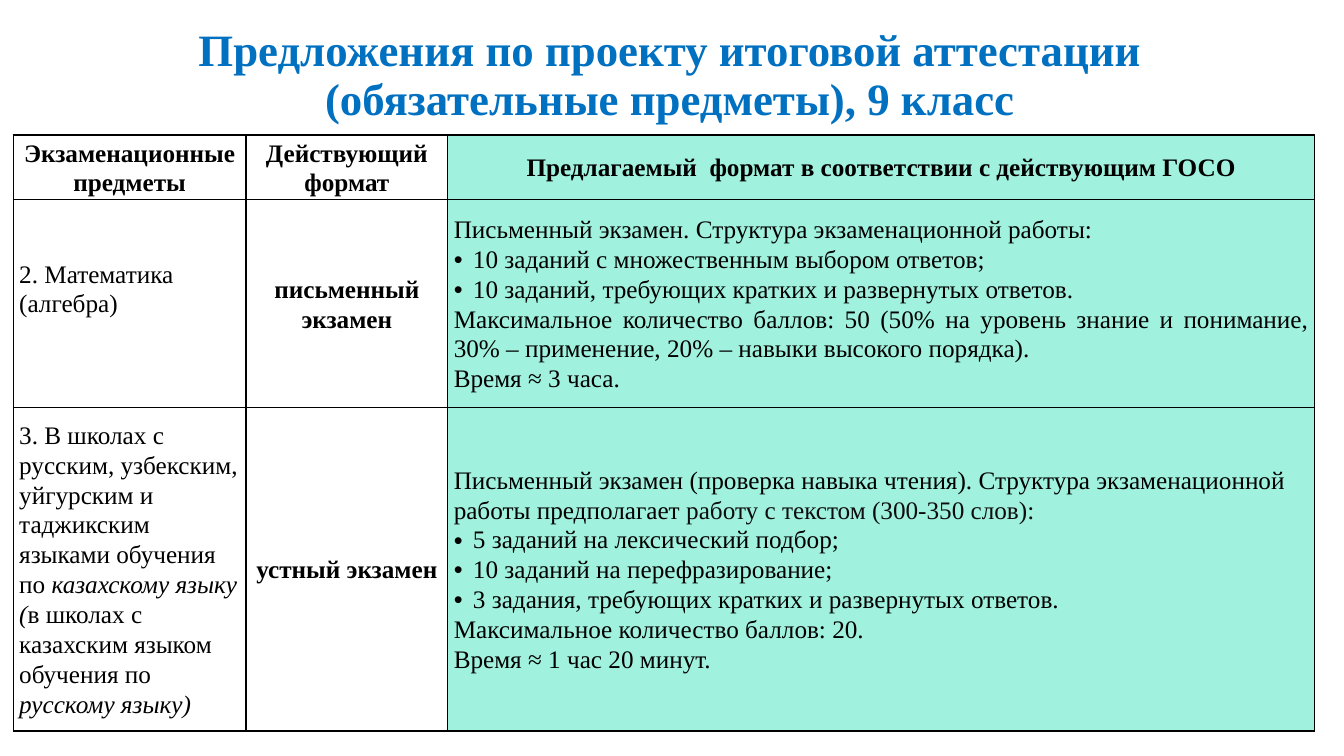
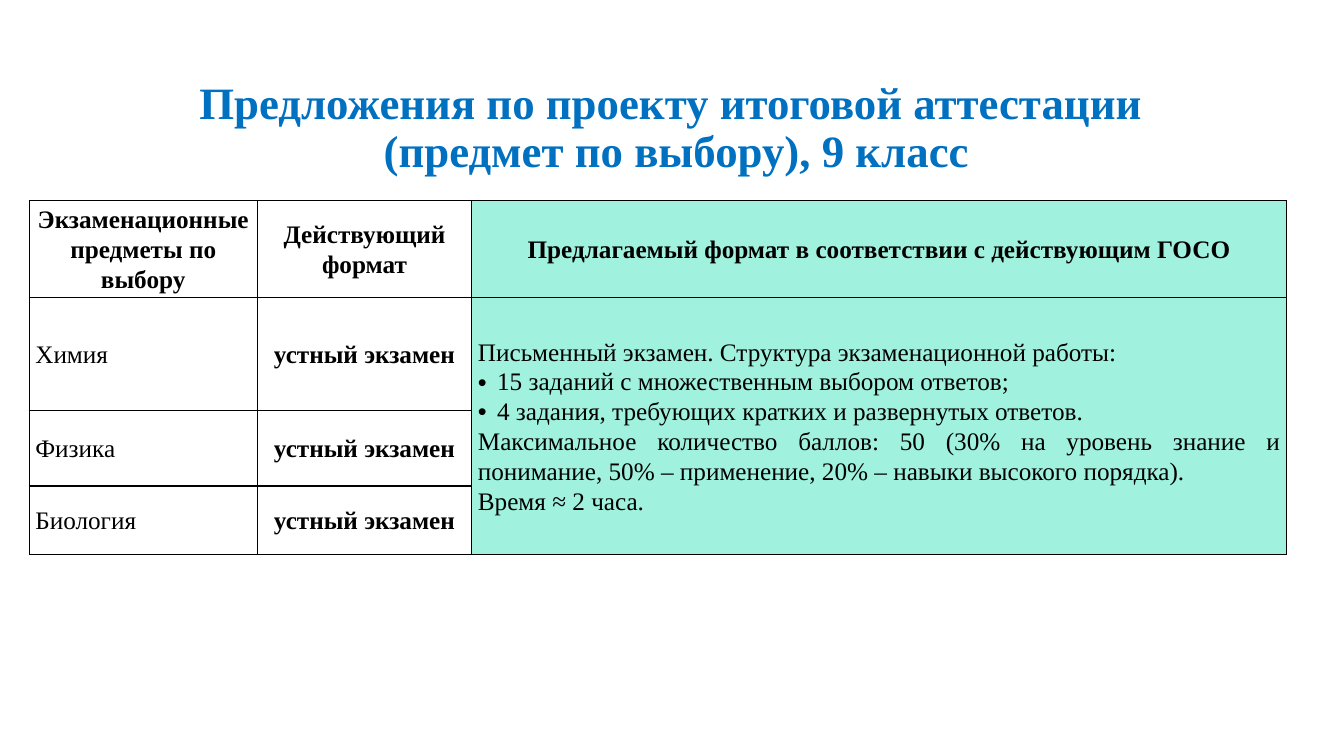
from dataclasses import dataclass
from itertools import product

from lxml.etree import SubElement
from pptx import Presentation
from pptx.dml.color import RGBColor
from pptx.enum.text import MSO_ANCHOR, PP_ALIGN
from pptx.oxml.ns import qn
from pptx.util import Inches, Pt

SLIDE_WIDTH, SLIDE_HEIGHT = Inches(13.33), Inches(7.5)


@dataclass(frozen=True)
class Theme:
    font: str = "Times New Roman"
    title_size: int = 32
    body_size: int = 18
    title: str = "0070C0"
    ink: str = "000000"
    soft_ink: str = "0D0D0D"
    proposal: str = "A0F1DE"
    border_width: int = 1
    title_spacing: float = 0.9
    body_spacing: float = 1.07
    cell_inset: float = 0.06
    bullet_indent: float = 0.19


THEME = Theme()


@dataclass(frozen=True)
class Box:
    """A region in percent of the slide's width and height."""
    left: float
    top: float
    width: float
    height: float

    def lengths(self):
        sides = (SLIDE_WIDTH, SLIDE_HEIGHT) * 2
        shares = (self.left, self.top, self.width, self.height)
        return [int(side * share / 100) for side, share in zip(sides, shares)]


@dataclass(frozen=True)
class Span:
    text: str
    italic: bool = False
    color: str = THEME.ink


@dataclass(frozen=True)
class Para:
    spans: tuple
    align: PP_ALIGN = PP_ALIGN.LEFT
    bullet: bool = False


def plain(*texts):
    return [Para((Span(text),)) for text in texts]


def centred(text):
    return [Para((Span(text),), PP_ALIGN.CENTER)]


def justified(*texts):
    return [Para((Span(text),), PP_ALIGN.JUSTIFY) for text in texts]


def bullets(*texts):
    return [Para((Span(text),), bullet=True) for text in texts]


def add_run(paragraph, text, size, color, bold, italic=False):
    run = paragraph.add_run()
    run.text = text
    font = run.font
    font.name, font.size = THEME.font, Pt(size)
    font.bold, font.italic = bold, italic
    font.color.rgb = RGBColor.from_string(color)


def add_title(slide, box, lines):
    frame = slide.shapes.add_textbox(*box.lengths()).text_frame
    frame.word_wrap = True
    frame.vertical_anchor = MSO_ANCHOR.TOP
    paragraph = frame.paragraphs[0]
    paragraph.alignment = PP_ALIGN.CENTER
    paragraph.line_spacing = THEME.title_spacing
    for number, line in enumerate(lines):
        if number:
            paragraph.add_line_break()
        add_run(paragraph, line, THEME.title_size, THEME.title, bold=True)


def add_bullet(paragraph):
    properties = paragraph._p.get_or_add_pPr()
    indent = Inches(THEME.bullet_indent)
    properties.set("marL", str(indent))
    properties.set("indent", str(-indent))
    SubElement(properties, qn("a:buFont"), typeface="Arial")
    SubElement(properties, qn("a:buChar"), char="•")


def draw_borders(cell):
    properties = cell._tc.get_or_add_tcPr()
    for side in ("lnL", "lnR", "lnT", "lnB"):
        line = SubElement(properties, qn(f"a:{side}"), w=str(Pt(THEME.border_width)))
        fill = SubElement(line, qn("a:solidFill"))
        SubElement(fill, qn("a:srgbClr"), val=THEME.ink)


def style_cell(cell, proposed):
    draw_borders(cell)
    if proposed:
        cell.fill.solid()
        cell.fill.fore_color.rgb = RGBColor.from_string(THEME.proposal)
    else:
        cell.fill.background()
    cell.vertical_anchor = MSO_ANCHOR.MIDDLE
    cell.margin_left = cell.margin_right = Inches(THEME.cell_inset)
    cell.margin_top = cell.margin_bottom = 0


def write_cell(cell, content, bold):
    frame = cell.text_frame
    for number, para in enumerate(content):
        paragraph = frame.add_paragraph() if number else frame.paragraphs[0]
        paragraph.alignment = para.align
        paragraph.line_spacing = THEME.body_spacing
        if para.bullet:
            add_bullet(paragraph)
        for span in para.spans:
            add_run(paragraph, span.text, THEME.body_size, span.color, bold, span.italic)


def share_out(total, weights):
    return [int(total * weight / sum(weights)) for weight in weights]


def add_exam_table(slide, box, column_weights, row_weights, rows):
    """Fill the box; a cell given as None continues the cell above it."""
    left, top, width, height = box.lengths()
    table = slide.shapes.add_table(
        len(row_weights), len(column_weights), left, top, width, height).table
    table.first_row = table.horz_banding = False
    for column, size in zip(table.columns, share_out(width, column_weights)):
        column.width = size
    for row, size in zip(table.rows, share_out(height, row_weights)):
        row.height = size
    last = len(column_weights) - 1
    for r, c in product(range(len(rows)), range(len(column_weights))):
        cell = table.cell(r, c)
        style_cell(cell, proposed=c == last)
        if rows[r][c] is not None:
            write_cell(cell, rows[r][c], bold=r == 0 or c == 1)
            end = r
            while end + 1 < len(rows) and rows[end + 1][c] is None:
                end += 1
            if end > r:
                cell.merge(table.cell(end, c))
    return table


def add_required_subjects(slide):
    add_title(slide, Box(4.65, 3.07, 90.4, 8.93),
              ("Предложения по проекту итоговой аттестации",
               "(обязательные предметы), 9 класс"))
    mathematics = (
        justified("Письменный экзамен. Структура экзаменационной работы:")
        + bullets("10 заданий с множественным выбором ответов;",
                  "10 заданий, требующих кратких и развернутых ответов.")
        + justified("Максимальное количество баллов: 50 (50% на уровень знание и понимание, "
                    "30% – применение, 20% – навыки высокого порядка).",
                    "Время ≈ 3 часа."))
    language_subject = [Para((
        Span("3. В школах с русским, узбекским, уйгурским и таджикским языками обучения по "),
        Span("казахскому языку (", italic=True),
        Span("в школах с казахским языком обучения по "),
        Span("русскому языку)", italic=True)))]
    reading = Para((
        Span("Письменный экзамен (проверка навыка чтения). "
             "Структура экзаменационной работы предполагает "),
        Span("работу с текстом (300-350 слов):", color=THEME.soft_ink)))
    language = (
        [reading]
        + bullets("5 заданий на лексический подбор;",
                  "10 заданий на перефразирование;",
                  "3 задания, требующих кратких и развернутых ответов.")
        + justified("Максимальное количество баллов: 20.", "Время ≈ 1 час 20 минут."))
    table = add_exam_table(
        slide, Box(0.98, 17.87, 96.85, 76.93), (2.31, 2, 8.6), (0.62, 2.06, 3.09),
        [(centred("Экзаменационные предметы"), centred("Действующий формат"),
          centred("Предлагаемый  формат в соответствии с действующим ГОСО")),
         (plain("2. Математика (алгебра)"), centred("письменный экзамен"), mathematics),
         (language_subject, centred("устный экзамен"), language)])
    table.cell(1, 0).margin_bottom = Inches(0.3)


def add_elective_subjects(slide):
    add_title(slide, Box(3.3, 10, 94.07, 8.13),
              ("Предложения по проекту итоговой аттестации ",
               "(предмет по выбору), 9 класс"))
    proposal = (
        plain("Письменный экзамен. Структура экзаменационной работы:")
        + bullets("15 заданий с множественным выбором ответов;",
                  "4 задания, требующих кратких и развернутых ответов.")
        + justified("Максимальное количество баллов: 50 (30% на уровень знание и понимание, "
                    "50% – применение, 20% – навыки высокого порядка).",
                    "Время ≈ 2 часа."))
    header = (centred("Экзаменационные предметы по выбору"), centred("Действующий формат"),
              centred("Предлагаемый формат в соответствии с действующим ГОСО"))
    subjects = [(plain(subject), centred("устный экзамен"), shared)
                for subject, shared in (("Химия", proposal), ("Физика", None),
                                        ("Биология", None))]
    add_exam_table(slide, Box(2.18, 26.53, 93.55, 45.73), (2.26, 2.13, 8.08),
                   (0.88, 1.12, 0.75, 0.68), [header] + subjects)


def main():
    presentation = Presentation()
    presentation.slide_width, presentation.slide_height = SLIDE_WIDTH, SLIDE_HEIGHT
    blank = presentation.slide_layouts[6]
    for build in (add_required_subjects, add_elective_subjects):
        build(presentation.slides.add_slide(blank))
    presentation.save("out.pptx")


if __name__ == "__main__":
    main()
